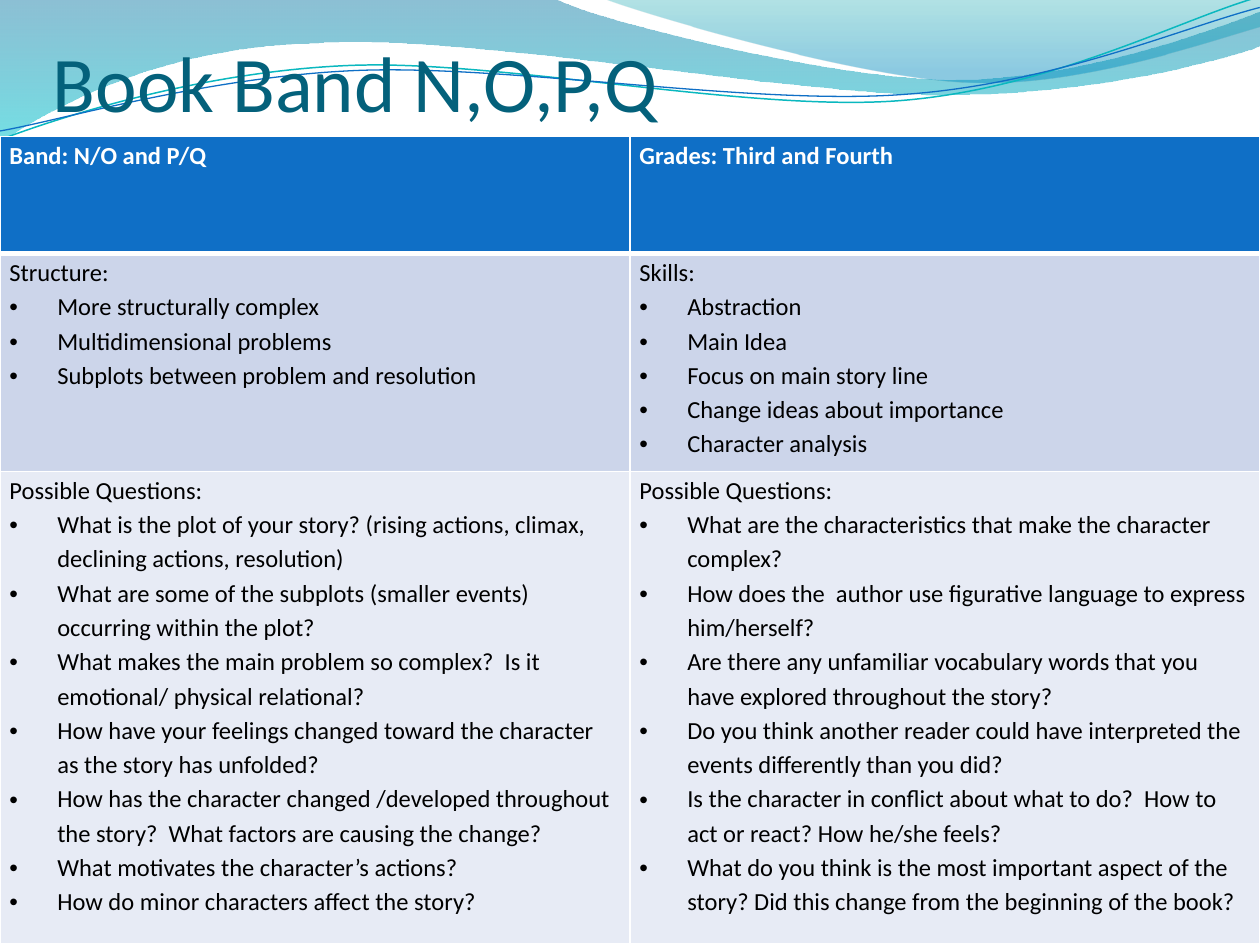
import math
from dataclasses import dataclass

from lxml import etree
from pptx import Presentation
from pptx.dml.color import RGBColor
from pptx.enum.text import MSO_ANCHOR, MSO_AUTO_SIZE, PP_ALIGN
from pptx.oxml.ns import qn
from pptx.util import Inches, Pt

LEFT, TOP, BOTTOM = PP_ALIGN.LEFT, MSO_ANCHOR.TOP, MSO_ANCHOR.BOTTOM
NO_AUTOFIT = MSO_AUTO_SIZE.NONE
TITLE_ONLY = 5
INDENT = Inches(0.38)
CELL_MARGIN = Pt(5.4)
TABLE_TOP = Pt(78)
LINE_TILT = -2.7


@dataclass(frozen=True)
class Theme:
    """Colours, font and type sizes of the slide."""
    font: str = "Calibri"
    title_size: float = 45
    table_size: float = 14
    title: str = "04617B"
    white: str = "FFFFFF"
    black: str = "000000"
    blue: str = "0F6FC6"
    teal: str = "0AB8BF"
    body_fills: tuple = ("CCD5EA", "E7EBF5")
    left_wave: tuple = ((0, "0074A1", 45), (1, "00C6CF", 55))
    right_wave: tuple = ((0, "00A1A9", 30), (0.8, "008BBF", 45))


THEME = Theme()

LEFT_WAVE = [
    (0, 0), (4.4, -0.01),
    (4.76, 0.17, 6.64, 0.63, 7.58, 0.63), (8.53, 0.63, 9.58, 0.26, 10, 0.09),
    (10.01, 0.36),
    (9.83, 0.44, 8.7, 0.76, 7.46, 0.75), (6.22, 0.75, 3.82, 0.28, 2.57, 0.34),
    (1.29, 0.36, 0.46, 0.83, -0.01, 1.13),
]
RIGHT_WAVE = [
    (4.79, -0.01),
    (5.09, 0.11, 6.82, 0.62, 7.69, 0.65), (8.56, 0.69, 9.61, 0.32, 10, 0.21),
    (10, 0),
]
TEAL_LINE = [
    (0, 1.11),
    (0.48, 0.93, 1.58, 0.57, 2.77, 0.52), (3.95, 0.47, 5.93, 0.89, 7.13, 0.8),
    (8.33, 0.71, 9.38, 0.15, 9.98, -0.02),
]
BLUE_LINE = [
    (0, 1.04),
    (0.47, 0.96, 1.64, 0.61, 2.83, 0.56), (4.03, 0.51, 5.97, 0.84, 7.17, 0.75),
    (8.36, 0.67, 9.41, 0.21, 10, 0.06),
]

ROW_HEIGHTS = (0.93, 1.73, 3.75)
HEADER = ("Band: N/O and P/Q", "Grades: Third and Fourth")
BODY = [
    [
        ("Structure:", [
            "More structurally complex",
            "Multidimensional problems",
            "Subplots between problem and resolution",
        ]),
        ("Skills:", [
            "Abstraction",
            "Main Idea",
            "Focus on main story line",
            "Change ideas about importance",
            "Character analysis",
        ]),
    ],
    [
        ("Possible Questions:", [
            "What is the plot of your story? (rising actions, climax, declining actions, resolution)",
            "What are some of the subplots (smaller events) occurring within the plot?",
            "What makes the main problem so complex?  Is it emotional/ physical relational?",
            "How have your feelings changed toward the character as the story has unfolded?",
            "How has the character changed /developed throughout the story?  "
            "What factors are causing the change?",
            "What motivates the character’s actions?",
            "How do minor characters affect the story?",
        ]),
        ("Possible Questions:", [
            "What are the characteristics that make the character complex?",
            "How does the  author use figurative language to express him/herself?",
            "Are there any unfamiliar vocabulary words that you have explored throughout the story?",
            "Do you think another reader could have interpreted the events differently than you did?",
            "Is the character in conflict about what to do?  How to act or react? How he/she feels?",
            "What do you think is the most important aspect of the story? "
            "Did this change from the beginning of the book?",
        ]),
    ],
]


def write_text(para, text, *, size, color, bold=False, spacing=None, bullet=False):
    """Write one formatted span into a paragraph."""
    para.alignment = LEFT
    if spacing:
        para.line_spacing = spacing
    if bullet:
        properties = para._p.get_or_add_pPr()
        properties.set("marL", str(INDENT))
        properties.set("indent", str(-INDENT))
        etree.SubElement(properties, qn("a:buFont"), typeface="Arial")
        etree.SubElement(properties, qn("a:buChar"), char="•")
    span = para.add_run()
    span.text = text
    span.font.name = THEME.font
    span.font.size = Pt(size)
    span.font.bold = bold
    span.font.color.rgb = RGBColor.from_string(color)


def turn(segments, degrees):
    """Turn segments clockwise about the middle of their ends."""
    center_x = (segments[0][0] + segments[-1][-2]) / 2
    center_y = (segments[0][1] + segments[-1][-1]) / 2
    cos, sin = math.cos(math.radians(degrees)), math.sin(math.radians(degrees))
    turned = []
    for segment in segments:
        pairs = [(x - center_x, y - center_y) for x, y in zip(segment[::2], segment[1::2])]
        turned.append(tuple(value for x, y in pairs for value in (
            center_x + x * cos - y * sin, center_y + x * sin + y * cos)))
    return turned


def add_path(slide, segments, closed):
    """Add a freeform of straight and cubic segments."""
    start, *others = [(Inches(x), Inches(y)) for segment in segments
                      for x, y in zip(segment[::2], segment[1::2])]
    builder = slide.shapes.build_freeform(*start)
    builder.add_line_segments(others, close=closed)
    shape = builder.convert_to_shape()
    shape.shadow.inherit = False
    steps = iter(list(shape.element.iter(qn("a:lnTo"))))
    for segment in segments[1:]:
        first = next(steps)
        if len(segment) == 6:
            first.tag = qn("a:cubicBezTo")
            for step in (next(steps), next(steps)):
                first.append(step[0])
                step.getparent().remove(step)
    return shape


def add_wave(slide, segments, stops):
    """Add a closed wave with a translucent gradient from top to bottom."""
    wave = add_path(slide, segments, True)
    wave.line.fill.background()
    wave.fill.gradient()
    wave.fill.gradient_angle = 270
    for stop, (position, color, _) in zip(wave.fill.gradient_stops, stops):
        stop.position = position
        stop.color.rgb = RGBColor.from_string(color)
    for node, (_, _, opacity) in zip(wave.element.iter(qn("a:srgbClr")), stops):
        etree.SubElement(node, qn("a:alpha"), val=str(opacity * 1000))


def add_wave_line(slide, segments, color, width):
    """Add an open curved line, tilted as a whole."""
    curve = add_path(slide, turn(segments, -LINE_TILT), False)
    curve.rotation = LINE_TILT
    curve.fill.background()
    curve.line.color.rgb = RGBColor.from_string(color)
    curve.line.width = Pt(width)


def set_title(slide, text):
    """Fill the title placeholder and bring it in front of the waves."""
    title = slide.shapes.title
    title.left, title.top, title.width, title.height = map(Inches, (0.42, 0.17, 9, 0.85))
    frame = title.text_frame
    frame.auto_size = NO_AUTOFIT
    frame.word_wrap = True
    frame.vertical_anchor = BOTTOM
    frame.margin_left = frame.margin_right = frame.margin_bottom = 0
    frame.margin_top = Inches(0.05)
    write_text(frame.paragraphs[0], text, size=THEME.title_size, color=THEME.title)
    title.element.getparent().append(title.element)


def set_borders(cell, top=1, bottom=1):
    """Draw white borders round a cell, with widths in points."""
    properties = cell._tc.get_or_add_tcPr()
    for index, (side, width) in enumerate(zip("LRTB", (1, 1, top, bottom))):
        line = etree.Element(qn(f"a:ln{side}"), w=str(Pt(width)))
        fill = etree.SubElement(line, qn("a:solidFill"))
        etree.SubElement(fill, qn("a:srgbClr"), val=THEME.white)
        properties.insert(index, line)


def fill_cell(cell, heading, bullets=(), *, fill, color, bold=False, **borders):
    """Write a heading and its bullets into a coloured cell."""
    cell.fill.solid()
    cell.fill.fore_color.rgb = RGBColor.from_string(fill)
    cell.vertical_anchor = TOP
    cell.margin_left = cell.margin_right = CELL_MARGIN
    cell.margin_top = cell.margin_bottom = 0
    style = dict(size=THEME.table_size, color=color, bold=bold, spacing=1.15)
    write_text(cell.text_frame.paragraphs[0], heading, **style)
    for text in bullets:
        write_text(cell.text_frame.add_paragraph(), text, bullet=True, **style)
    set_borders(cell, **borders)


def add_band_table(slide):
    """Add the table of structure, skills and questions."""
    table = slide.shapes.add_table(len(ROW_HEIGHTS), len(HEADER), 0, TABLE_TOP,
                                   Inches(10), Inches(sum(ROW_HEIGHTS))).table
    for row, height in zip(table.rows, ROW_HEIGHTS):
        row.height = Inches(height)
    for column, heading in enumerate(HEADER):
        fill_cell(table.cell(0, column), heading, fill=THEME.blue, color=THEME.white,
                  bold=True, bottom=3)
    for row, (contents, fill) in enumerate(zip(BODY, THEME.body_fills), start=1):
        for column, (heading, bullets) in enumerate(contents):
            fill_cell(table.cell(row, column), heading, bullets, fill=fill,
                      color=THEME.black, top=3 if row == 1 else 1)


def main():
    """Build the slide and save the deck."""
    deck = Presentation()
    deck.slide_width, deck.slide_height = Inches(10), Inches(7.5)
    page = deck.slides.add_slide(deck.slide_layouts[TITLE_ONLY])
    add_wave(page, LEFT_WAVE, THEME.left_wave)
    add_wave(page, RIGHT_WAVE, THEME.right_wave)
    add_wave_line(page, TEAL_LINE, THEME.teal, 0.85)
    add_wave_line(page, BLUE_LINE, THEME.blue, 0.75)
    set_title(page, "Book Band N,O,P,Q")
    add_band_table(page)
    deck.save("out.pptx")


if __name__ == "__main__":
    main()
